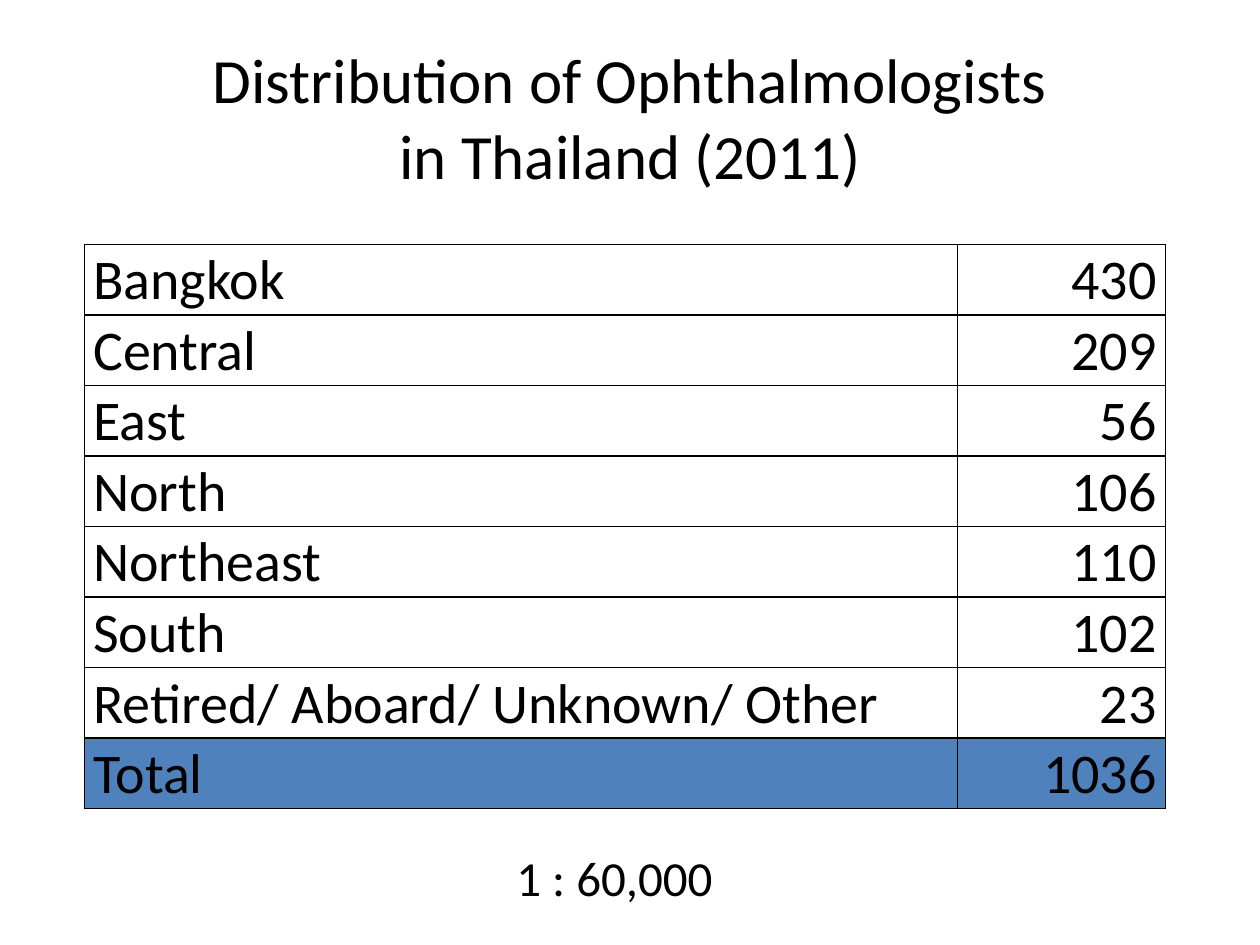
import dataclasses
import typing

import lxml.etree
import pptx
import pptx.dml.color
import pptx.enum.text
import pptx.oxml.ns
import pptx.util

ALIGN = pptx.enum.text.PP_ALIGN
ANCHOR = pptx.enum.text.MSO_ANCHOR
WIDE, HIGH = 10, 7.5
BLACK, BLUE = "000000", "4F81BD"
COLS = (6.93, 1.65, 0.79)
ROW = 0.56
SIDES = ("L", "R", "T", "B")


@dataclasses.dataclass
class Label:
    text: str
    left: float
    top: float
    width: float
    height: float
    size: int
    align: typing.Any
    anchor: typing.Any
    wrap: bool


@dataclasses.dataclass
class Region:
    name: str
    count: str
    fill: typing.Optional[str] = None


LABELS = [
    Label("Distribution of Ophthalmologists\vin Thailand (2011)",
          0.05, 0.04, 0.9, 1 / 6, 36, ALIGN.CENTER, ANCHOR.MIDDLE, True),
    Label("1 : 60,000", 0.4, 0.89, 0.2, 0.08, 28, ALIGN.LEFT, ANCHOR.TOP, False),
]
REGIONS = [
    Region("Bangkok", "430"),
    Region("Central", "209"),
    Region("East", "56"),
    Region("North", "106"),
    Region("Northeast", "110"),
    Region("South", "102"),
    Region("Retired/ Aboard/ Unknown/ Other", "23"),
    Region("Total", "1036", BLUE),
]


def color(code: str) -> pptx.dml.color.RGBColor:
    return pptx.dml.color.RGBColor.from_string(code)


def write(frame: typing.Any, text: str, size: int, align: typing.Any) -> None:
    frame.text = text
    para = frame.paragraphs[0]
    para.alignment = align
    para.font.name = "Calibri"
    para.font.size = pptx.util.Pt(size)
    para.font.color.rgb = color(BLACK)


def label(slide: typing.Any, item: Label) -> None:
    box = slide.shapes.add_textbox(
        pptx.util.Inches(item.left * WIDE), pptx.util.Inches(item.top * HIGH),
        pptx.util.Inches(item.width * WIDE), pptx.util.Inches(item.height * HIGH))
    frame = box.text_frame
    frame.word_wrap = item.wrap
    frame.vertical_anchor = item.anchor
    write(frame, item.text, item.size, item.align)


def border(cell: typing.Any, edges: str) -> None:
    props = cell._tc.get_or_add_tcPr()
    name = pptx.oxml.ns.qn
    for side in SIDES:
        line = lxml.etree.SubElement(props, name(f"a:ln{side}"), w="12700")
        if side in edges:
            fill = lxml.etree.SubElement(line, name("a:solidFill"))
            lxml.etree.SubElement(fill, name("a:srgbClr"), val=BLACK)
        else:
            lxml.etree.SubElement(line, name("a:noFill"))


def paint(cell: typing.Any, code: typing.Optional[str]) -> None:
    if code:
        cell.fill.solid()
        cell.fill.fore_color.rgb = color(code)
    else:
        cell.fill.background()


def entry(cell: typing.Any, text: str, align: typing.Any) -> None:
    cell.margin_left = cell.margin_right = pptx.util.Inches(0.07)
    cell.margin_top = cell.margin_bottom = 0
    cell.vertical_anchor = ANCHOR.BOTTOM
    write(cell.text_frame, text, 32, align)


def grid(slide: typing.Any, rows: typing.List[Region]) -> None:
    total = len(rows) + 1
    frame = slide.shapes.add_table(
        total, len(COLS), pptx.util.Inches(0.67), pptx.util.Inches(1.38),
        pptx.util.Inches(sum(COLS)), pptx.util.Inches(ROW * total))
    table = frame.table
    table.first_row = table.horz_banding = False
    for col, width in zip(table.columns, COLS):
        col.width = pptx.util.Inches(width)
    for row in table.rows:
        row.height = pptx.util.Inches(ROW)
    for spot in range(len(COLS)):
        cell = table.cell(0, spot)
        border(cell, "B" if spot < 2 else "")
        paint(cell, None)
    for spot, item in enumerate(rows, 1):
        name, count, blank = (table.cell(spot, col) for col in range(len(COLS)))
        for cell, edges, code in ((name, "LRTB", item.fill),
                                  (count, "LRTB", item.fill),
                                  (blank, "L", None)):
            border(cell, edges)
            paint(cell, code)
        entry(name, item.name, ALIGN.LEFT)
        entry(count, item.count, ALIGN.RIGHT)


def main() -> None:
    deck = pptx.Presentation()
    deck.slide_width = pptx.util.Inches(WIDE)
    deck.slide_height = pptx.util.Inches(HIGH)
    slide = deck.slides.add_slide(deck.slide_layouts[6])
    head, ratio = LABELS
    label(slide, head)
    grid(slide, REGIONS)
    label(slide, ratio)
    deck.save("out.pptx")


if __name__ == "__main__":
    main()
